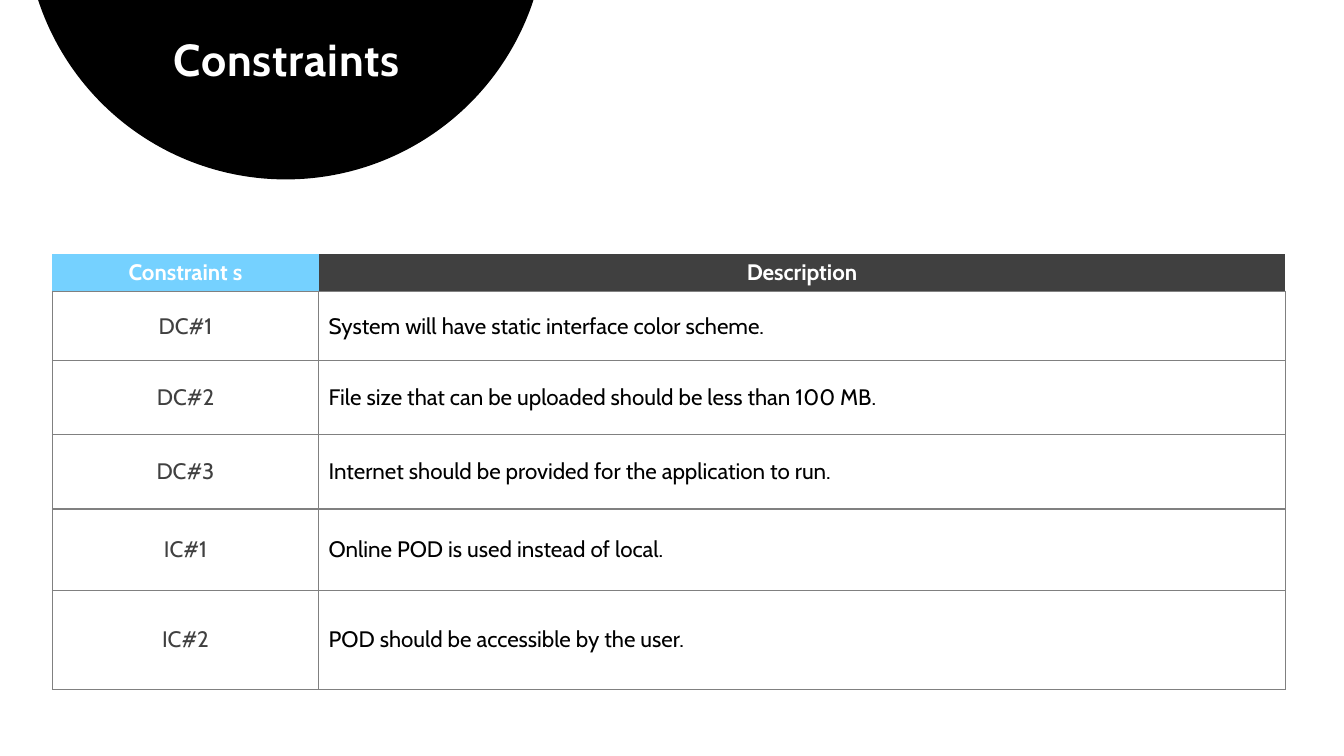
from lxml import etree
from pptx import Presentation
from pptx.dml.color import RGBColor
from pptx.enum import shapes, text
from pptx.oxml import ns
from pptx.util import Inches, Pt

COLORS = {
    "black": "000000",
    "white": "FFFFFF",
    "sky": "75D1FF",
    "charcoal": "404040",
    "grid": "808080",
}
COLUMN_WIDTHS = [2.64, 9.59]
ROW_HEIGHTS = [0.37, 0.69, 0.73, 0.74, 0.81, 0.98]
HEADERS = ["Constraint s", "Description"]
CONSTRAINTS = [
    ("DC#1", "System will have static interface color scheme."),
    ("DC#2", "File size that can be uploaded should be less than 100 MB."),
    ("DC#3", "Internet should be provided for the application to run."),
    ("IC#1", "Online POD is used instead of local."),
    ("IC#2", "POD should be accessible by the user."),
]


def color(name):
    """Return the named palette colour."""
    return RGBColor.from_string(COLORS[name])


def write(frame, words, font_color, align, **font_format):
    """Put one formatted run into a text frame and return it."""
    paragraph = frame.paragraphs[0]
    paragraph.alignment = align
    run = paragraph.add_run()
    run.text = words
    run.font.color.rgb = color(font_color)
    for name, value in {"name": "Cabin", **font_format}.items():
        setattr(run.font, name, value)
    return run


def add_circle(slide, left, top, size):
    """Draw the black disc behind the title."""
    shape = slide.shapes.add_shape(
        shapes.MSO_SHAPE.OVAL, Inches(left), Inches(top), Inches(size), Inches(size))
    shape.shadow.inherit = False
    shape.fill.solid()
    shape.fill.fore_color.rgb = color("black")
    shape.line.fill.background()


def add_title(slide, words):
    """Write the title over the disc."""
    box = slide.shapes.add_textbox(Inches(0.61), Inches(-0.08), Inches(4.47), Inches(1))
    frame_format = {
        "word_wrap": True,
        "vertical_anchor": text.MSO_ANCHOR.TOP,
        "margin_left": Inches(0.16),
        "margin_right": Inches(0.16),
        "margin_top": Inches(0.46),
        "margin_bottom": Inches(0.05),
    }
    for name, value in frame_format.items():
        setattr(box.text_frame, name, value)
    run = write(box.text_frame, words, "white", text.PP_ALIGN.CENTER, size=Pt(32), bold=True)
    run.font._element.set("spc", "60")
    box.text_frame.paragraphs[0].line_spacing = 0.9


def set_borders(cell, visible):
    """Rule the visible sides of a cell and clear the others."""
    properties = cell._tc.get_or_add_tcPr()
    for side in "LRTB":
        line = etree.SubElement(properties, ns.qn(f"a:ln{side}"), w=str(Pt(1)))
        if side in visible:
            fill = etree.SubElement(line, ns.qn("a:solidFill"))
            etree.SubElement(fill, ns.qn("a:srgbClr"), val=COLORS["grid"])
        else:
            etree.SubElement(line, ns.qn("a:noFill"))


def fill_cell(cell, words, fill, font_color, align, bold, borders):
    """Fill, rule and label one table cell."""
    set_borders(cell, borders)
    if fill:
        cell.fill.solid()
        cell.fill.fore_color.rgb = color(fill)
    else:
        cell.fill.background()
    cell.vertical_anchor = text.MSO_ANCHOR.MIDDLE
    write(cell.text_frame, words, font_color, align, size=Pt(16), bold=bold)


def add_constraints_table(slide):
    """Build the table of constraints and descriptions."""
    table = slide.shapes.add_table(
        len(ROW_HEIGHTS), len(COLUMN_WIDTHS), Inches(0.52), Inches(2.52),
        Inches(sum(COLUMN_WIDTHS)), Inches(sum(ROW_HEIGHTS))).table
    table.horz_banding = False
    for column, width in zip(table.columns, COLUMN_WIDTHS):
        column.width = Inches(width)
    for row, height in zip(table.rows, ROW_HEIGHTS):
        row.height = Inches(height)
    center, left = text.PP_ALIGN.CENTER, text.PP_ALIGN.LEFT
    for index, (words, fill) in enumerate(zip(HEADERS, ["sky", "charcoal"])):
        fill_cell(table.cell(0, index), words, fill, "white", center, True, "B")
    for index, (label, description) in enumerate(CONSTRAINTS, 1):
        fill_cell(table.cell(index, 0), label, "white", "charcoal", center, False, "LRTB")
        fill_cell(table.cell(index, 1), description, None, "black", left, False, "LRTB")


def main():
    """Build and save the constraints slide."""
    presentation = Presentation()
    presentation.slide_width = Inches(13.33)
    presentation.slide_height = Inches(7.5)
    slide = presentation.slides.add_slide(presentation.slide_layouts[6])
    add_circle(slide, 0.25, -3.39, 5.17)
    add_title(slide, "Constraints")
    add_constraints_table(slide)
    presentation.save("out.pptx")


if __name__ == "__main__":
    main()
